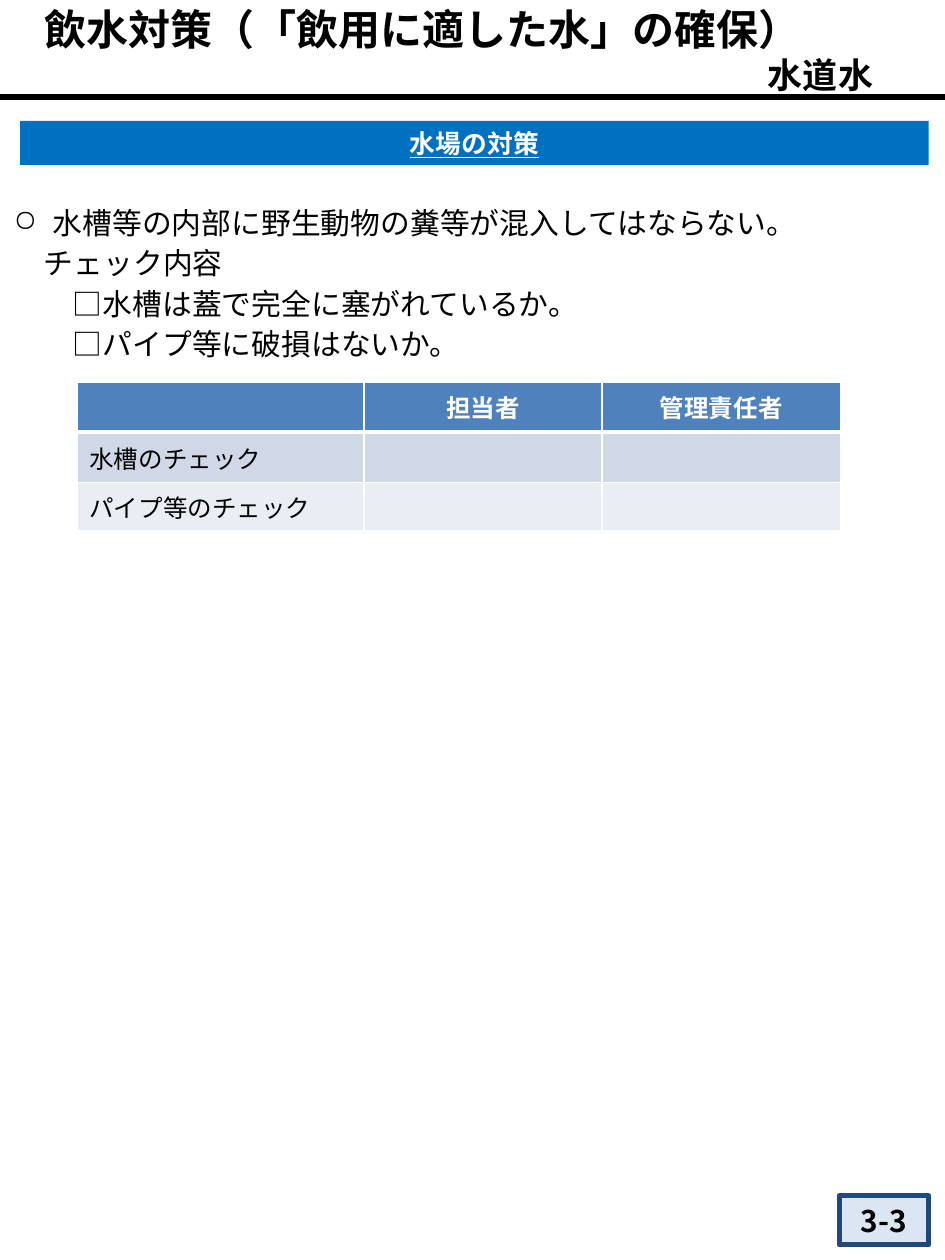
from lxml import etree
from pptx import Presentation
from pptx.dml.color import RGBColor
from pptx.enum.shapes import MSO_CONNECTOR, MSO_SHAPE
from pptx.enum.text import MSO_ANCHOR, MSO_AUTO_SIZE, PP_ALIGN
from pptx.oxml.ns import qn
from pptx.util import Inches, Pt

LEFT, CENTER, RIGHT = PP_ALIGN.LEFT, PP_ALIGN.CENTER, PP_ALIGN.RIGHT
MIDDLE = MSO_ANCHOR.MIDDLE
NO_AUTOFIT = MSO_AUTO_SIZE.NONE
RECTANGLE = MSO_SHAPE.RECTANGLE
STRAIGHT = MSO_CONNECTOR.STRAIGHT

BLACK = RGBColor(0x00, 0x00, 0x00)
WHITE = RGBColor(0xFF, 0xFF, 0xFF)
BANNER_BLUE = RGBColor(0x00, 0x70, 0xC0)
NAVY = RGBColor(0x1F, 0x49, 0x7D)
PALE_BLUE = RGBColor(0xDC, 0xE6, 0xF2)
HEADER_BLUE = RGBColor(0x4F, 0x81, 0xBD)
BAND_DARK = RGBColor(0xD0, 0xD8, 0xE8)
BAND_LIGHT = RGBColor(0xE9, 0xED, 0xF4)
JAPANESE_FONT = "Noto Sans CJK JP"


def style_paragraph(paragraph, size, color=BLACK, bold=False, align=LEFT, latin=JAPANESE_FONT):
    paragraph.alignment = align
    font = paragraph.font
    font.size = Pt(size)
    font.bold = bold
    font.color.rgb = color
    font.name = latin
    east_asian = etree.Element(qn("a:ea"), typeface=JAPANESE_FONT)
    font._element.find(qn("a:latin")).addnext(east_asian)


def add_border(cell, side, width):
    line = etree.SubElement(cell._tc.get_or_add_tcPr(), qn(f"a:{side}"), w=str(Pt(width)))
    fill = etree.SubElement(line, qn("a:solidFill"))
    etree.SubElement(fill, qn("a:srgbClr"), val=str(WHITE))


presentation = Presentation()
presentation.slide_width = Inches(7.5)
presentation.slide_height = Inches(10)
slide = presentation.slides.add_slide(presentation.slide_layouts[5])

rule = slide.shapes.add_connector(STRAIGHT, 0, Inches(0.77), Inches(7.5), Inches(0.77))
rule.line.color.rgb = BLACK
rule.line.width = Pt(3)
etree.SubElement(rule._element.spPr, qn("a:effectLst"))

title = slide.shapes.title
title.left, title.top = Inches(0.23), Inches(-0.04)
title.width, title.height = Inches(6.82), Inches(0.87)
title_frame = title.text_frame
title_frame.text = "飲水対策（「飲用に適した水」の確保）\n水道水"
title_frame.auto_size = NO_AUTOFIT
title_frame.vertical_anchor = MIDDLE
title_frame.margin_left = title_frame.margin_right = Inches(0.12)
title_frame.margin_top = title_frame.margin_bottom = Inches(0.06)
heading, water_type = title_frame.paragraphs
style_paragraph(heading, 24, bold=True)
style_paragraph(water_type, 20, bold=True, align=RIGHT)

banner = slide.shapes.add_shape(RECTANGLE, Inches(0.16), Inches(0.96), Inches(7.21), Inches(0.35))
banner.shadow.inherit = False
banner.fill.solid()
banner.fill.fore_color.rgb = BANNER_BLUE
banner.line.fill.background()
banner.text_frame.text = "水場の対策"
banner_paragraph = banner.text_frame.paragraphs[0]
style_paragraph(banner_paragraph, 14.7, WHITE, True, CENTER, "Arial")
banner_paragraph.font.underline = True

page_label = slide.shapes.add_shape(RECTANGLE, Inches(6.66), Inches(9.49), Inches(0.71), Inches(0.39))
page_label.shadow.inherit = False
page_label.fill.solid()
page_label.fill.fore_color.rgb = PALE_BLUE
page_label.line.color.rgb = NAVY
page_label.line.width = Pt(3)
page_label.text_frame.text = "3-3"
style_paragraph(page_label.text_frame.paragraphs[0], 17, bold=True, align=CENTER)

checklist = slide.shapes.add_textbox(Inches(0.01), Inches(1.54), Inches(7.49), Inches(1.35))
checklist_frame = checklist.text_frame
checklist_frame.word_wrap = True
checklist_lines = [
    ("水槽等の内部に野生動物の糞等が混入してはならない。", 0.31),
    ("チェック内容", 0.24),
    ("□水槽は蓋で完全に塞がれているか。", 0.47),
    ("□パイプ等に破損はないか。", 0.47),
]
checklist_frame.text = "\n".join(text for text, _ in checklist_lines)
for paragraph, (_, indent) in zip(checklist_frame.paragraphs, checklist_lines):
    paragraph.line_spacing = Pt(23)
    properties = paragraph._p.get_or_add_pPr()
    properties.set("marL", str(Inches(indent)))
    if paragraph.text == checklist_lines[0][0]:
        properties.set("indent", str(-Inches(indent)))
        etree.SubElement(properties, qn("a:buChar"), char="○")
    style_paragraph(paragraph, 17)

table_rows = [
    (["", "担当者", "管理責任者"], HEADER_BLUE, 0.4),
    (["水槽のチェック", "", ""], BAND_DARK, 0.4),
    (["パイプ等のチェック", "", ""], BAND_LIGHT, 0.38),
]
table = slide.shapes.add_table(3, 3, Inches(0.61), Inches(3.03), Inches(6.06), Inches(1.18)).table
for column, width in zip(table.columns, [2.28, 1.89, 1.89]):
    column.width = Inches(width)
for row_index, (texts, fill_color, height) in enumerate(table_rows):
    is_header = row_index == 0
    table.rows[row_index].height = Inches(height)
    for column_index, text in enumerate(texts):
        cell = table.cell(row_index, column_index)
        cell.text = text
        cell.vertical_anchor = MIDDLE
        style_paragraph(cell.text_frame.paragraphs[0], 14, WHITE if is_header else BLACK,
                        is_header, CENTER if is_header else LEFT)
        for side in ["lnL", "lnR", "lnT", "lnB"]:
            header_edge = (row_index, side) in [(0, "lnB"), (1, "lnT")]
            add_border(cell, side, 3 if header_edge else 1)
        cell.fill.solid()
        cell.fill.fore_color.rgb = fill_color

presentation.save("out.pptx")
